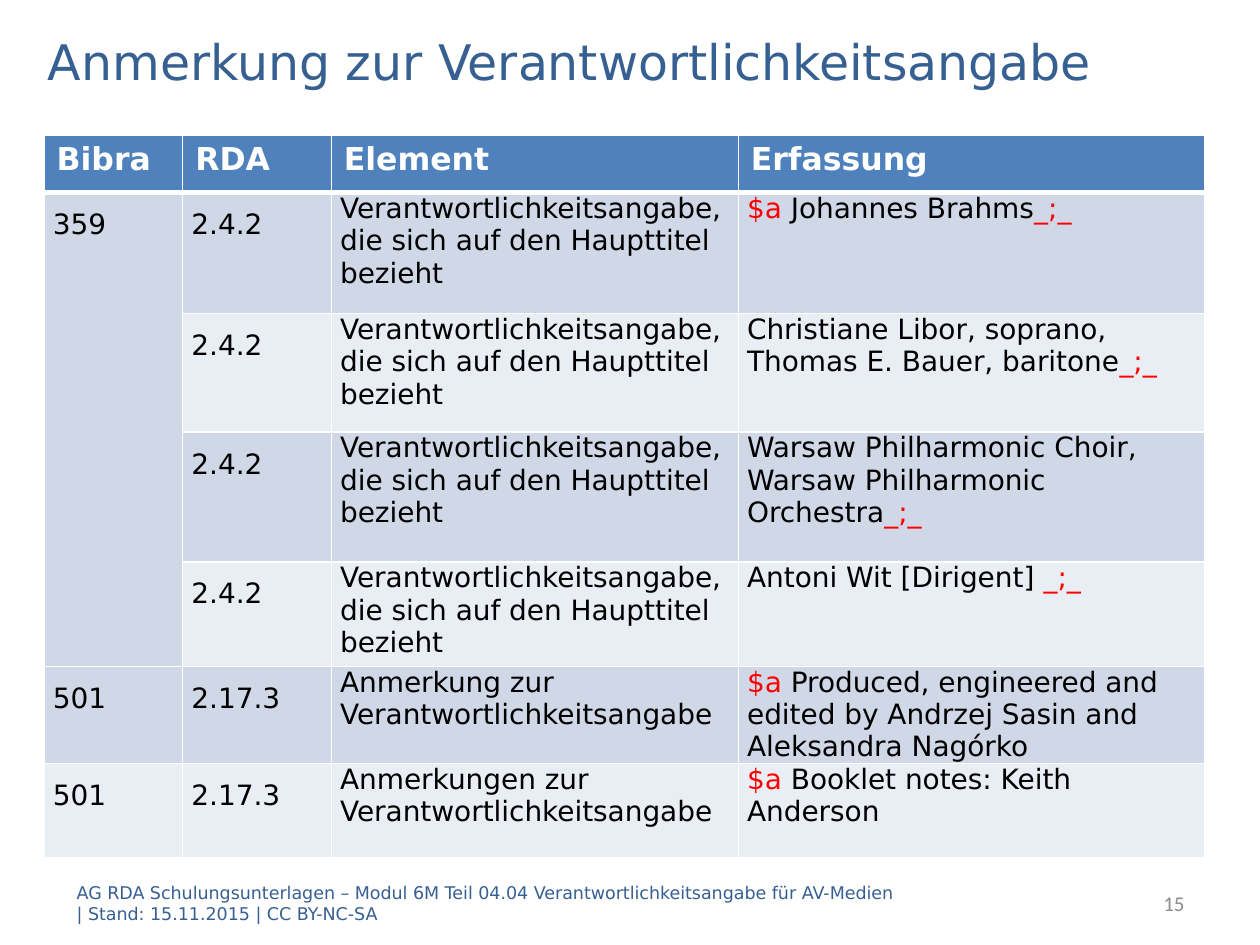
from dataclasses import dataclass

from lxml import etree
from pptx import Presentation
from pptx.dml.color import RGBColor
from pptx.enum.text import MSO_ANCHOR, PP_ALIGN
from pptx.oxml.ns import qn
from pptx.util import Inches, Pt

MIDDLE = MSO_ANCHOR.MIDDLE
LEFT, RIGHT = PP_ALIGN.LEFT, PP_ALIGN.RIGHT


@dataclass(frozen=True)
class Theme:
    font: str = "DejaVu Sans"
    number_font: str = "Calibri"
    title_size: int = 28
    header_size: int = 18
    body_size: int = 16
    number_size: int = 12
    footer_size: int = 10
    blue: str = "376092"
    header_fill: str = "4F81BD"
    bands: tuple = ("D0D8E8", "E9EDF4")
    white: str = "FFFFFF"
    black: str = "000000"
    red: str = "FF0000"
    gray: str = "8C8C8C"


THEME = Theme()
COLUMN_WIDTHS = (1.1, 1.18, 3.23, 3.7)
ROW_HEIGHTS = (0.46, 0.96, 0.94, 1.03, 0.83, 0.75, 0.75)
TABLE_LEFT, TABLE_TOP = 0.35, 1.07
FOOTER_TOP, FOOTER_HEIGHT = 6.97, 0.4

SUBFIELD = "$a "
SEPARATOR = "_;_"
MARKS = (SUBFIELD.strip(), SEPARATOR)
HEADERS = ("Bibra", "RDA", "Element", "Erfassung")
STATEMENT = "Verantwortlichkeitsangabe, die sich auf den Haupttitel bezieht"
STATEMENT_ROWS = 4
RECORDS = (
    ("359", "2.4.2", STATEMENT, (SUBFIELD, "Johannes Brahms", SEPARATOR)),
    ("", "2.4.2", STATEMENT,
     ("Christiane Libor, soprano, Thomas E. Bauer, baritone", SEPARATOR)),
    ("", "2.4.2", STATEMENT,
     ("Warsaw Philharmonic Choir, Warsaw Philharmonic Orchestra", SEPARATOR)),
    ("", "2.4.2", STATEMENT, ("Antoni Wit [Dirigent]", " " + SEPARATOR)),
    ("501", "2.17.3", "Anmerkung zur Verantwortlichkeitsangabe",
     (SUBFIELD, "Produced, engineered and edited by Andrzej Sasin and Aleksandra Nagórko")),
    ("501", "2.17.3", "Anmerkungen zur Verantwortlichkeitsangabe",
     (SUBFIELD, "Booklet notes: Keith Anderson")),
)


def write_text(text_frame, text, *, size, color, font=THEME.font, bold=False,
               align=LEFT, line_spacing=1.0, space_after=0):
    """Write one paragraph from a string or a sequence of runs; cataloguing marks turn red."""
    text_frame.word_wrap = True
    paragraph = text_frame.paragraphs[0]
    paragraph.alignment = align
    paragraph.line_spacing = line_spacing
    paragraph.space_after = Pt(space_after)
    for segment in (text,) if isinstance(text, str) else text:
        run = paragraph.add_run()
        run.text = segment
        run.font.name = font
        run.font.size = Pt(size)
        run.font.bold = bold
        run_color = THEME.red if segment.strip() in MARKS else color
        run.font.color.rgb = RGBColor.from_string(run_color)


def set_borders(cell, bottom_width=1):
    """Draw white borders; they must precede the fill in the cell properties."""
    properties = cell._tc.get_or_add_tcPr()
    widths = {"lnL": 1, "lnR": 1, "lnT": 1, "lnB": bottom_width}
    for index, (side, width) in enumerate(widths.items()):
        line = etree.Element(qn(f"a:{side}"), w=str(Pt(width)))
        fill = etree.SubElement(line, qn("a:solidFill"))
        etree.SubElement(fill, qn("a:srgbClr"), val=THEME.white)
        properties.insert(index, line)


def style_cell(cell, fill, bottom_width=1):
    cell.fill.solid()
    cell.fill.fore_color.rgb = RGBColor.from_string(fill)
    set_borders(cell, bottom_width)


def add_title(slide, text):
    title = slide.shapes.title
    title.left, title.top = Inches(0.28), Inches(0.2)
    title.width, title.height = Inches(9.45), Inches(0.56)
    title.text_frame.vertical_anchor = MIDDLE
    write_text(title.text_frame, text, size=THEME.title_size, color=THEME.blue)


def add_record_table(slide):
    shape = slide.shapes.add_table(
        len(ROW_HEIGHTS), len(COLUMN_WIDTHS), Inches(TABLE_LEFT), Inches(TABLE_TOP),
        Inches(sum(COLUMN_WIDTHS)), Inches(sum(ROW_HEIGHTS)))
    table = shape.table
    for column, width in zip(table.columns, COLUMN_WIDTHS):
        column.width = Inches(width)
    for row, height in zip(table.rows, ROW_HEIGHTS):
        row.height = Inches(height)

    for column, header in enumerate(HEADERS):
        cell = table.cell(0, column)
        style_cell(cell, THEME.header_fill, bottom_width=3)
        write_text(cell.text_frame, header, size=THEME.header_size,
                   color=THEME.white, bold=True)

    for row, record in enumerate(RECORDS, start=1):
        for column, text in enumerate(record):
            cell = table.cell(row, column)
            style_cell(cell, THEME.bands[(row - 1) % 2])
            cell.margin_left = cell.margin_right = Inches(0.07)
            cell.margin_top = cell.margin_bottom = 0
            if text:
                write_text(cell.text_frame, text, size=THEME.body_size,
                           color=THEME.black, space_after=6,
                           line_spacing=1.5 if column < 2 else 1.0)
    table.cell(1, 0).merge(table.cell(STATEMENT_ROWS, 0))


def add_footer_text(slide, left, width, text, **text_format):
    box = slide.shapes.add_textbox(Inches(left), Inches(FOOTER_TOP),
                                   Inches(width), Inches(FOOTER_HEIGHT))
    box.text_frame.vertical_anchor = MIDDLE
    write_text(box.text_frame, text, **text_format)


def main():
    presentation = Presentation()
    presentation.slide_width, presentation.slide_height = Inches(10), Inches(7.5)
    slide = presentation.slides.add_slide(presentation.slide_layouts[5])
    add_record_table(slide)
    add_title(slide, "Anmerkung zur Verantwortlichkeitsangabe")
    add_footer_text(
        slide, 0.51, 6.69,
        "AG RDA Schulungsunterlagen – Modul 6M Teil 04.04 Verantwortlichkeitsangabe "
        "für AV-Medien | Stand: 15.11.2015 | CC BY-NC-SA",
        size=THEME.footer_size, color=THEME.blue)
    add_footer_text(slide, 7.91, 1.59, "15", size=THEME.number_size,
                    color=THEME.gray, font=THEME.number_font, align=RIGHT)
    presentation.save("out.pptx")


if __name__ == "__main__":
    main()
